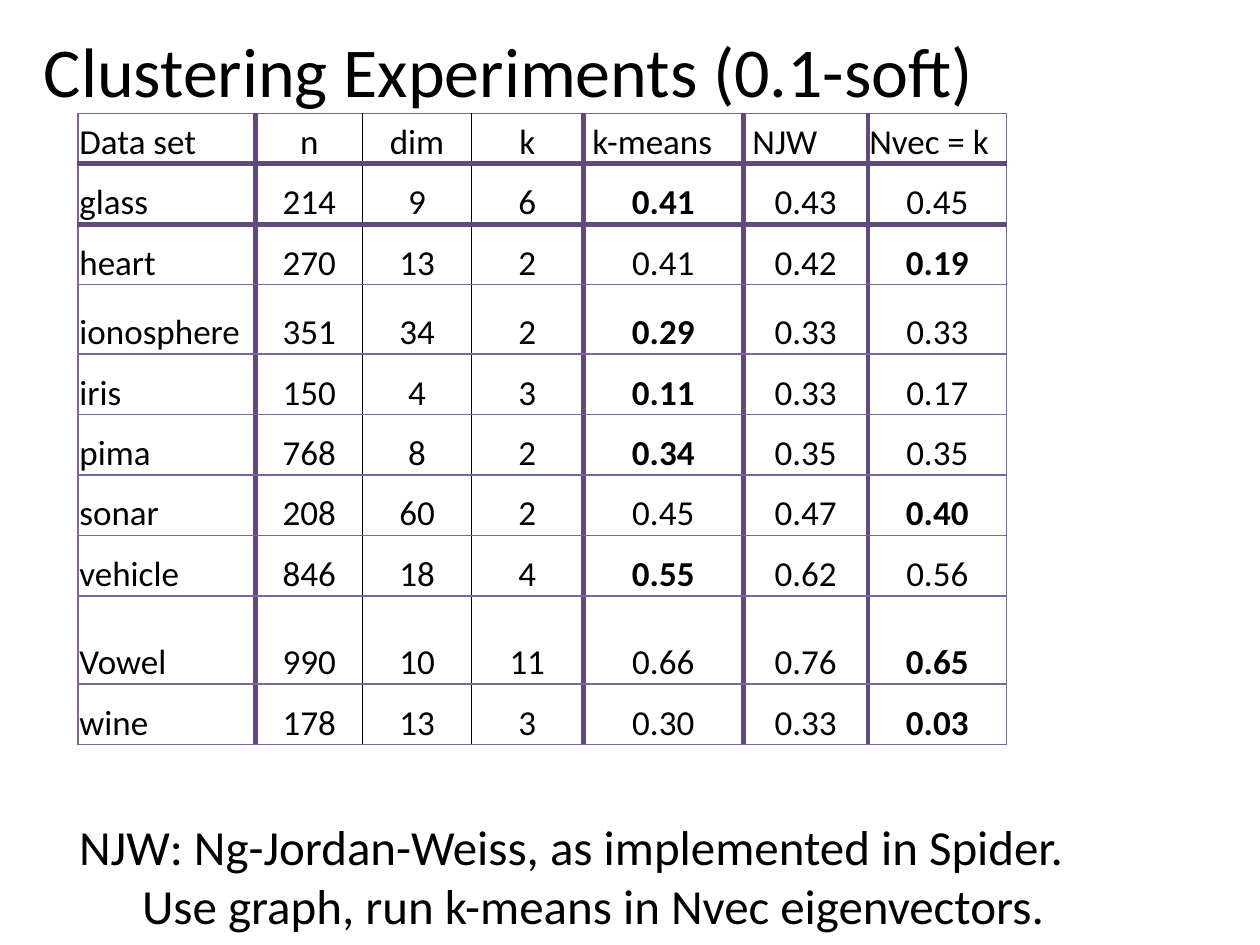
"""Build a slide with a table of clustering error rates."""
from lxml.etree import SubElement
from pptx import Presentation
from pptx.dml.color import RGBColor
from pptx.enum.text import MSO_ANCHOR, MSO_AUTO_SIZE, PP_ALIGN
from pptx.oxml.ns import qn
from pptx.util import Inches, Pt

TITLE = "Clustering Experiments (0.1-soft)"
NOTES = [
    "NJW: Ng-Jordan-Weiss, as implemented in Spider.",
    "\tUse graph, run k-means in Nvec eigenvectors.",
]
HEADER = ("Data set", "n", "dim", "k", " k-means", " NJW", "Nvec = k")
RESULTS = [
    ("glass", "214", "9", "6", "0.41", "0.43", "0.45"),
    ("heart", "270", "13", "2", "0.41", "0.42", "0.19"),
    ("ionosphere", "351", "34", "2", "0.29", "0.33", "0.33"),
    ("iris", "150", "4", "3", "0.11", "0.33", "0.17"),
    ("pima", "768", "8", "2", "0.34", "0.35", "0.35"),
    ("sonar", "208", "60", "2", "0.45", "0.47", "0.40"),
    ("vehicle", "846", "18", "4", "0.55", "0.62", "0.56"),
    ("Vowel", "990", "10", "11", "0.66", "0.76", "0.65"),
    ("wine", "178", "13", "3", "0.30", "0.33", "0.03"),
]
COL_WIDTHS = [1.41, 0.85, 0.86, 0.89, 1.27, 0.99, 1.1]
ROW_HEIGHTS = [0.4, 0.48, 0.48, 0.55, 0.48, 0.48, 0.48, 0.48, 0.7, 0.48]
FIRST_SCORE = 4

BLACK = RGBColor(0x00, 0x00, 0x00)
PURPLE = RGBColor(0x80, 0x64, 0xA2)
DARK_PURPLE = RGBColor(0x60, 0x4A, 0x7B)
HAIR, THIN, THICK = (BLACK, 0.5), (PURPLE, 1), (DARK_PURPLE, 3)
COL_RULES = [THIN, THICK, HAIR, HAIR, THICK, THICK, THICK, THIN]
ROW_RULES = [THIN, THICK, THICK] + [THIN] * 8


def write(tf, *lines, size=20, bold=False, align=PP_ALIGN.LEFT):
    for i, text in enumerate(lines):
        p = tf.add_paragraph() if i else tf.paragraphs[0]
        p.alignment = align
        r = p.add_run()
        r.text = text
        r.font.name = "Calibri"
        r.font.size = Pt(size)
        r.font.bold = bold
        r.font.color.rgb = BLACK


def add_text(s, box, *lines, size):
    tf = s.shapes.add_textbox(*map(Inches, box)).text_frame
    tf.word_wrap = False
    tf.auto_size = MSO_AUTO_SIZE.SHAPE_TO_FIT_TEXT
    write(tf, *lines, size=size)


def set_borders(cell, row, col):
    rules = {
        "L": COL_RULES[col],
        "R": COL_RULES[col + 1],
        "T": ROW_RULES[row],
        "B": ROW_RULES[row + 1],
    }
    tc_pr = cell._tc.get_or_add_tcPr()
    for side, (color, width) in rules.items():
        ln = SubElement(tc_pr, qn(f"a:ln{side}"), w=str(Pt(width)))
        fill = SubElement(ln, qn("a:solidFill"))
        SubElement(fill, qn("a:srgbClr"), val=str(color))


def add_results(s, left, top):
    rows = [HEADER] + RESULTS
    size = (sum(COL_WIDTHS), sum(ROW_HEIGHTS))
    table = s.shapes.add_table(
        len(rows), len(HEADER), *map(Inches, (left, top, *size))
    ).table
    table.first_row = table.horz_banding = False
    for column, width in zip(table.columns, COL_WIDTHS):
        column.width = Inches(width)
    for i, values in enumerate(rows):
        table.rows[i].height = Inches(ROW_HEIGHTS[i])
        best = min(values[FIRST_SCORE:], key=float) if i else None
        for j, text in enumerate(values):
            cell = table.cell(i, j)
            cell.vertical_anchor = MSO_ANCHOR.BOTTOM
            cell.margin_left = cell.margin_right = cell.margin_top = Inches(0.01)
            cell.margin_bottom = 0
            left_set = j == 0 or (i == 0 and j >= FIRST_SCORE)
            write(
                cell.text_frame,
                text,
                bold=j >= FIRST_SCORE and text == best,
                align=PP_ALIGN.LEFT if left_set else PP_ALIGN.CENTER,
            )
            set_borders(cell, i, j)
            cell.fill.background()


def main():
    prs = Presentation()
    prs.slide_width, prs.slide_height = Inches(10), Inches(7.5)
    s = prs.slides.add_slide(prs.slide_layouts[6])
    add_text(s, (0.25, 0.17, 7.67, 0.77), TITLE, size=40)
    add_text(s, (0.53, 6.43, 8.47, 1.04), *NOTES, size=28)
    add_results(s, 0.62, 0.9)
    prs.save("out.pptx")


if __name__ == "__main__":
    main()
